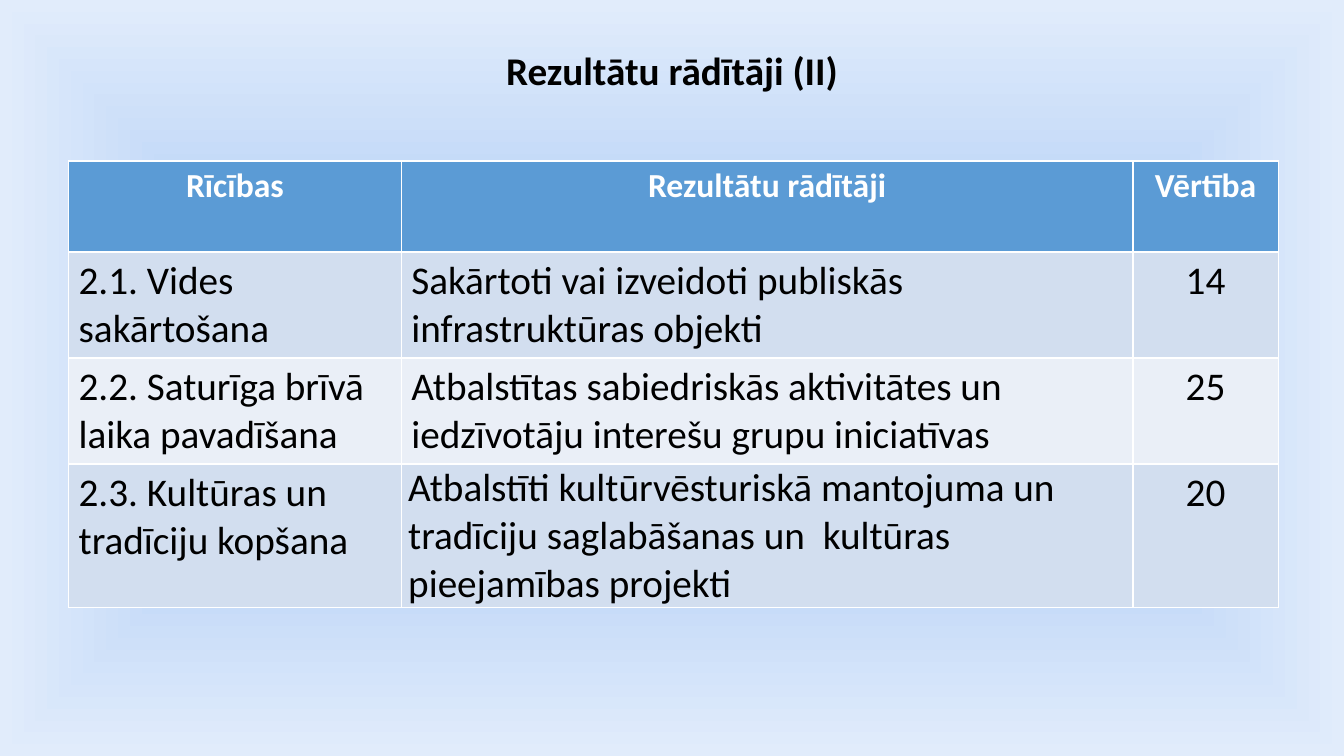
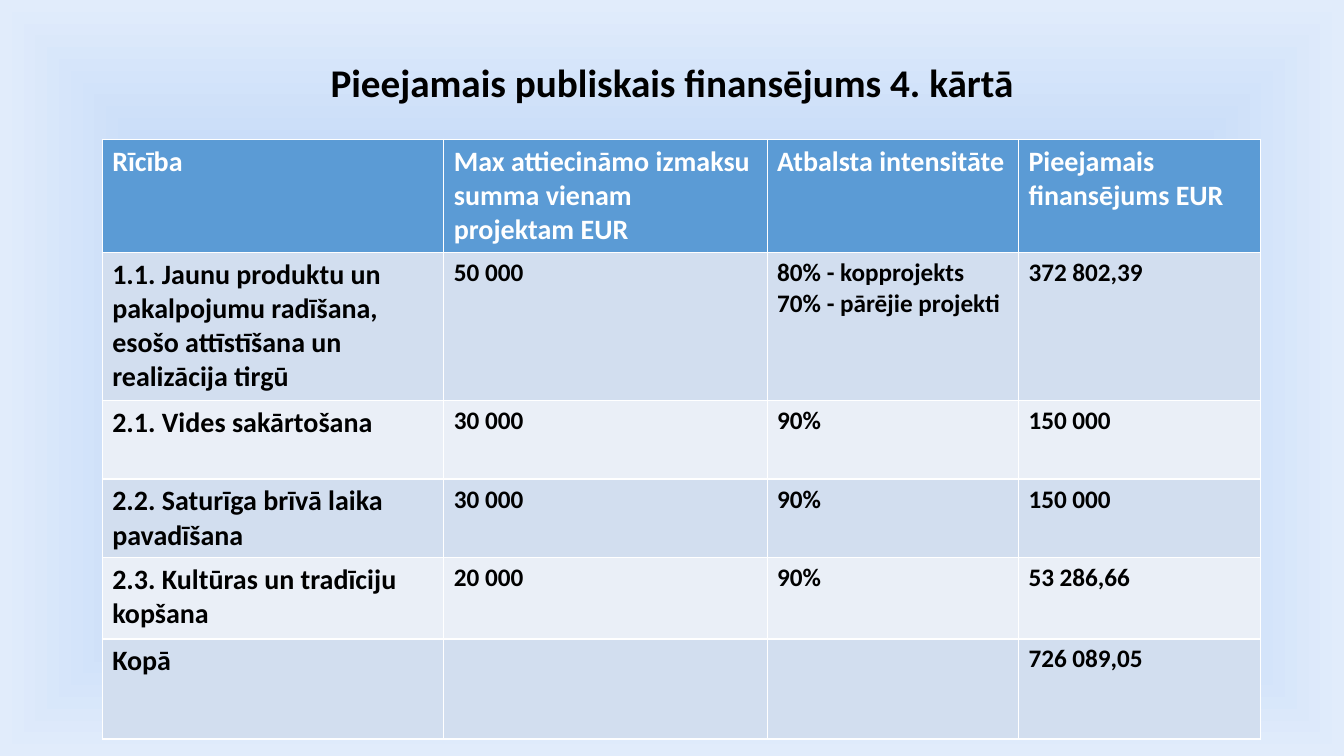
from pptx import Presentation
from pptx.dml.color import RGBColor
from pptx.enum.text import MSO_ANCHOR, MSO_AUTO_SIZE, PP_ALIGN
from pptx.oxml import parse_xml
from pptx.util import Pt

FONT = "Calibri"
BLACK = RGBColor(0x00, 0x00, 0x00)
WHITE = RGBColor(0xFF, 0xFF, 0xFF)
HEADER = RGBColor(0x5B, 0x9B, 0xD5)
BANDS = [RGBColor(0xD2, 0xDE, 0xEF), RGBColor(0xEA, 0xEF, 0xF7)]
GLOW = [(0, RGBColor(0xFF, 0xD9, 0x66)), (50, RGBColor(0xC1, 0xD8, 0xF8)),
        (100, RGBColor(0xE1, 0xEC, 0xFB))]


def format_text(p, size, color, bold, align):
    p.font.name, p.font.size, p.font.bold = FONT, Pt(size), bold
    p.font.color.rgb = color
    p.alignment = align


def add_table_slide(title, title_box, origin, widths, heights, rows,
                    head_size, body_sizes, body_bold, head_align, body_aligns):
    s = prs.slides.add_slide(prs.slide_layouts[5])

    # Title
    sp = s.shapes.title
    sp.left, sp.top, sp.width, sp.height = [Pt(v) for v in title_box]
    tf = sp.text_frame
    tf.text = title
    tf.auto_size = MSO_AUTO_SIZE.NONE
    tf.vertical_anchor = MSO_ANCHOR.MIDDLE
    p = tf.paragraphs[0]
    format_text(p, 28, BLACK, True, PP_ALIGN.CENTER)
    p.line_spacing = 0.9

    # Table
    table = s.shapes.add_table(len(rows), len(widths), *[Pt(v) for v in origin],
                               Pt(sum(widths)), Pt(sum(heights))).table
    for column, width in zip(table.columns, widths):
        column.width = Pt(width)
    for i, (texts, height) in enumerate(zip(rows, heights)):
        table.rows[i].height = Pt(height)
        for j, text in enumerate(texts):
            cell = table.cell(i, j)
            cell.fill.solid()
            cell.fill.fore_color.rgb = BANDS[(i - 1) % 2] if i else HEADER
            cell.text = text
            for p in cell.text_frame.paragraphs:
                if i == 0:
                    format_text(p, head_size, WHITE, True, head_align)
                else:
                    format_text(p, body_sizes[j], BLACK, body_bold, body_aligns[j])
    return table


prs = Presentation()
prs.slide_width, prs.slide_height = Pt(960), Pt(540)

# Shared background: gradient spreading from the centre
stops = "".join(f'<a:gs pos="{pos * 1000}"><a:srgbClr val="{color}"/></a:gs>'
                for pos, color in GLOW)
fill = prs.slide_master.background.fill
fill.gradient()
bg = prs.slide_master.element.cSld.bg
grad = bg.bgPr[0]
bg.bgPr.replace(grad, parse_xml(
    '<a:gradFill xmlns:a="http://schemas.openxmlformats.org/drawingml/2006/main" '
    f'rotWithShape="1"><a:gsLst>{stops}</a:gsLst><a:path path="shape">'
    '<a:fillToRect l="50000" t="50000" r="50000" b="50000"/></a:path></a:gradFill>'))

# Slide 1: result indicators
table = add_table_slide(
    "Rezultātu rādītāji (II)", (66, 23, 828, 58), (49, 115),
    [237.6, 522.7, 103.7], [65, 75.7, 75.7, 102],
    [
        ["Rīcības", "Rezultātu rādītāji", "Vērtība"],
        ["2.1. Vides sakārtošana",
         "Sakārtoti vai izveidoti publiskās infrastruktūras objekti", "14"],
        ["2.2. Saturīga brīvā laika pavadīšana",
         "Atbalstītas sabiedriskās aktivitātes un iedzīvotāju interešu grupu iniciatīvas",
         "25"],
        ["2.3. Kultūras un tradīciju kopšana",
         "Atbalstīti kultūrvēsturiskā mantojuma un tradīciju saglabāšanas un  kultūras "
         "pieejamības projekti", "20"],
    ],
    24, [28, 28, 28], False, PP_ALIGN.CENTER,
    [PP_ALIGN.LEFT, PP_ALIGN.LEFT, PP_ALIGN.CENTER])
tight = table.cell(3, 1)
tight.margin_left = tight.margin_right = Pt(5)
tight.margin_top = tight.margin_bottom = Pt(0)

# Slide 2: available funding
add_table_slide(
    "Pieejamais publiskais finansējums 4. kārtā", (66, 19.5, 828, 82), (73, 99.5),
    [244, 231, 179.5, 173], [80, 106, 56, 56, 58, 71.5],
    [
        ["Rīcība", "Max attiecināmo izmaksu summa vienam projektam EUR",
         "Atbalsta intensitāte", "Pieejamais finansējums EUR"],
        ["1.1. Jaunu produktu un pakalpojumu radīšana, esošo attīstīšana un "
         "realizācija tirgū", "50 000",
         "80% - kopprojekts\n70% - pārējie projekti", "372 802,39"],
        ["2.1. Vides sakārtošana", "30 000", "90%", "150 000"],
        ["2.2. Saturīga brīvā laika pavadīšana", "30 000", "90%", "150 000"],
        ["2.3. Kultūras un tradīciju kopšana", "20 000", "90%", "53 286,66"],
        ["Kopā", "", "", "726 089,05"],
    ],
    20, [20, 18, 18, 18], True, PP_ALIGN.LEFT, [PP_ALIGN.LEFT] * 4)

prs.save("out.pptx")
